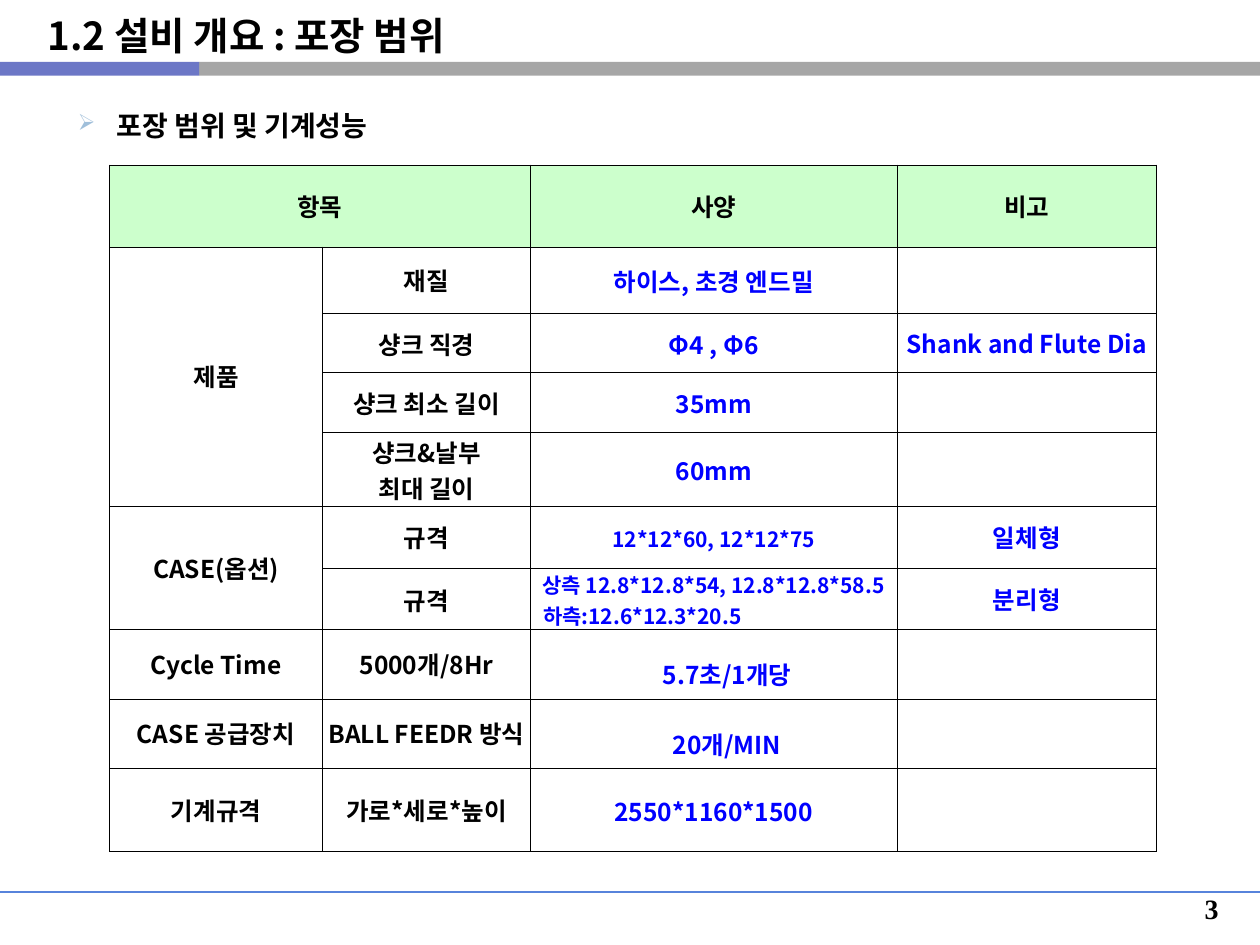
"""Build the packaging range and machine performance slide."""
from lxml import etree
from pptx import Presentation
from pptx.dml.color import RGBColor
from pptx.enum import shapes, text
from pptx.oxml import ns
from pptx.util import Inches, Pt

FONT = "Noto Sans CJK KR"
BLACK, BLUE, GREEN, LINE_BLUE = "000000", "0000FF", "CCFFCC", "5783DB"
BARS = [(1.58, 8.42, "A6A6A6"), (0, 1.58, "6C77C6")]
TITLE = "1.2 설비 개요 : 포장 범위"
SUBTITLE = "포장 범위 및 기계성능"
COLUMNS = [1.69, 1.65, 2.91, 2.06]
ROWS = [
    (0.65, "항목", "", "사양", "비고"),
    (0.53, "제품", "재질", "하이스, 초경 엔드밀", ""),
    (0.47, "", "샹크 직경", "Φ4 , Φ6", "Shank and Flute Dia"),
    (0.47, "", "샹크 최소 길이", "35mm", ""),
    (0.59, "", "샹크&날부\n최대 길이", "60mm", ""),
    (0.49, "CASE(옵션)", "규격", "12*12*60, 12*12*75", "일체형"),
    (0.49, "", "규격", "상측 12.8*12.8*54, 12.8*12.8*58.5\n하측:12.6*12.3*20.5", "분리형"),
    (0.55, "Cycle Time", "5000개/8Hr", "5.7초/1개당", ""),
    (0.55, "CASE 공급장치", "BALL FEEDR 방식", "20개/MIN", ""),
    (0.66, "기계규격", "가로*세로*높이", "2550*1160*1500", ""),
]
MERGES = [((0, 0), (0, 1)), ((1, 0), (4, 0)), ((5, 0), (6, 0))]
SINGLE_SPACED = {(2, 1), (3, 1), (4, 1), (6, 1)} | {(row, 2) for row in (1, 2, 3, 4, 5, 6, 9)}
LOOSE = {(7, 2), (8, 2)}
SMALL = {(5, 2), (6, 2)}
LEFT_LINE = "하측"
ALIGN = text.PP_ALIGN


def rgb(value):
    return RGBColor.from_string(value)


def apply(target, values):
    for name, value in values.items():
        setattr(target, name, value)


def add_element(parent, tag, **attributes):
    element = etree.SubElement(parent, ns.qn(tag))
    for name, value in attributes.items():
        element.set(name, str(value))
    return element


def write(paragraph, words, size, color=BLACK, font=FONT, **layout):
    apply(paragraph, layout)
    run = paragraph.add_run()
    run.text = words
    apply(run.font, {"size": Pt(size), "bold": True, "name": font})
    run.font.color.rgb = rgb(color)
    add_element(run.font._element, "a:ea", typeface=font)


def indent(paragraph, left, first=0):
    properties = paragraph._p.get_or_add_pPr()
    properties.set("marL", str(Inches(left)))
    properties.set("indent", str(Inches(first)))
    return properties


def add_text_box(slide, box):
    frame = slide.shapes.add_textbox(*map(Inches, box)).text_frame
    frame.word_wrap = True
    return frame.paragraphs[0]


def add_frame(slide):
    for left, width, color in BARS:
        bar = slide.shapes.add_shape(
            shapes.MSO_SHAPE.RECTANGLE, *map(Inches, (left, 0.49, width, 0.11)))
        bar.shadow.inherit = False
        bar.fill.solid()
        bar.fill.fore_color.rgb = rgb(color)
        bar.line.fill.background()
    rule = slide.shapes.add_connector(
        shapes.MSO_CONNECTOR.STRAIGHT, *map(Inches, (-0.01, 7.08, 10, 7.08)))
    rule.line.color.rgb = rgb(LINE_BLUE)
    rule.line.width = Pt(1)
    add_element(rule._element.spPr, "a:effectLst")
    write(add_text_box(slide, (8.7, 7.06, 1.07, 0.44)), "3", 16,
          font="Times New Roman", alignment=ALIGN.RIGHT, line_spacing=0.9)


def add_borders(cell):
    properties = cell._tc.get_or_add_tcPr()
    for position, side in enumerate(("a:lnL", "a:lnR", "a:lnT", "a:lnB")):
        border = add_element(properties, side, w=Pt(0.5))
        properties.insert(position, border)
        add_element(add_element(border, "a:solidFill"), "a:srgbClr", val=BLACK)


def format_cell(cell, row, column, words):
    inset = Inches(0.01)
    apply(cell, {"margin_left": inset, "margin_right": inset, "margin_top": inset,
                 "margin_bottom": 0, "vertical_anchor": text.MSO_ANCHOR.MIDDLE})
    if row == 0:
        cell.fill.solid()
        cell.fill.fore_color.rgb = rgb(GREEN)
    else:
        cell.fill.background()
    add_borders(cell)
    place = (row, column)
    spacing = 1.5 if place in LOOSE else 1.0 if place in SINGLE_SPACED else 0.9
    for number, line in enumerate(words.split("\n") if words else []):
        frame = cell.text_frame
        paragraph = frame.add_paragraph() if number else frame.paragraphs[0]
        left_line = line.startswith(LEFT_LINE)
        if left_line:
            indent(paragraph, 0.09)
        elif place in LOOSE:
            indent(paragraph, 0.21)
        write(paragraph, line, 12 if place in SMALL else 14,
              BLUE if row and column > 1 else BLACK,
              alignment=ALIGN.LEFT if left_line else ALIGN.CENTER, line_spacing=spacing)


def add_specification_table(slide):
    table = slide.shapes.add_table(
        len(ROWS), len(COLUMNS), Inches(0.87), Inches(1.31),
        Inches(sum(COLUMNS)), Inches(sum(row[0] for row in ROWS))).table
    apply(table, {"first_row": False, "horz_banding": False})
    for column, width in enumerate(COLUMNS):
        table.columns[column].width = Inches(width)
    for row, (height, *entries) in enumerate(ROWS):
        table.rows[row].height = Inches(height)
        for column, words in enumerate(entries):
            format_cell(table.cell(row, column), row, column, words)
    for first, last in MERGES:
        table.cell(*first).merge(table.cell(*last))


def add_headings(slide):
    write(add_text_box(slide, (0.28, 0.09, 6.38, 0.43)), TITLE, 22, line_spacing=0.9)
    subtitle = add_text_box(slide, (0.31, 0.68, 9.1, 1.02))
    properties = indent(subtitle, 0.52, -0.31)
    add_element(add_element(properties, "a:buClr"), "a:srgbClr", val="A0BFDA")
    add_element(properties, "a:buSzPct", val=80000)
    add_element(properties, "a:buChar", char="➢")
    write(subtitle, SUBTITLE, 16, line_spacing=1.5)


def main():
    presentation = Presentation()
    apply(presentation, {"slide_width": Inches(10), "slide_height": Inches(7.5)})
    slide = presentation.slides.add_slide(presentation.slide_layouts[6])
    add_frame(slide)
    add_specification_table(slide)
    add_headings(slide)
    presentation.save("out.pptx")


if __name__ == "__main__":
    main()
